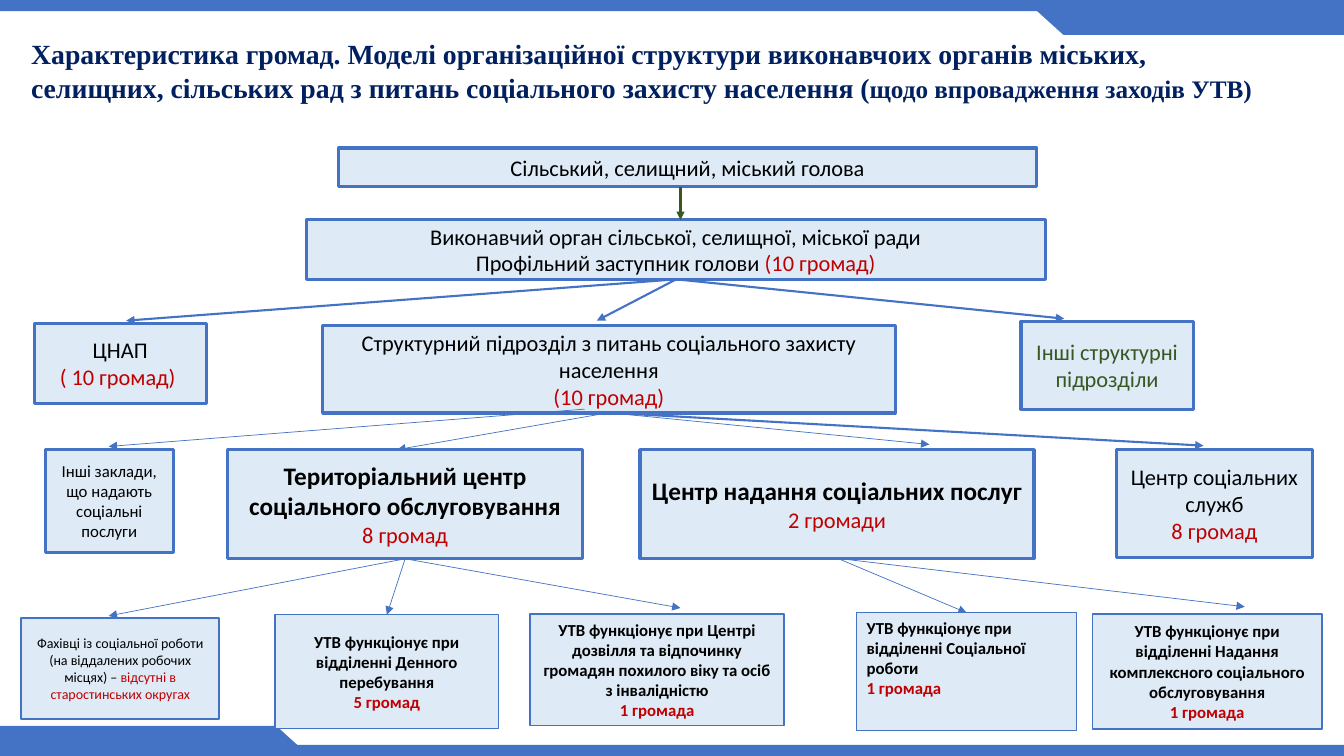
from dataclasses import dataclass

import pptx
import pptx.dml.color
import pptx.enum.shapes
import pptx.enum.text
import pptx.oxml
import pptx.oxml.ns
import pptx.util

Cm, Pt = pptx.util.Cm, pptx.util.Pt
RGB = pptx.dml.color.RGBColor.from_string
SHAPE = pptx.enum.shapes.MSO_SHAPE
ALIGN = pptx.enum.text.PP_ALIGN
ANCHOR = pptx.enum.text.MSO_ANCHOR


@dataclass(frozen=True)
class Style:
    size: float
    color: str
    bold: bool = False
    font: str = "Calibri"


class Theme:
    blue, pale, green = "4472C4", "DEEBF7", "385723"
    black, red, navy = "000000", "C00000", "002060"
    thick, medium, thin, hair = 2.25, 1.5, 1, 0.5
    title = Style(19.8, navy, True, "Times New Roman")
    subtitle = Style(18, navy, True, "Times New Roman")
    body = Style(16, black)
    note = Style(16, red)
    aside = Style(16, green)
    centre = Style(18, black, True)
    small = Style(12, black)
    group = Style(12, black, True)
    count = Style(12, red, True)
    tiny = Style(10, black)
    tiny_note = Style(10, red)


@dataclass(frozen=True)
class Box:
    """A rectangle in centimetres."""
    x: float
    y: float
    w: float
    h: float

    def inner(self, x, y, w, h):
        return Box(self.x + x, self.y + y, w, h)

    def lengths(self):
        return Cm(self.x), Cm(self.y), Cm(self.w), Cm(self.h)


def add_run(p, text, style):
    r = p.add_run()
    r.text = text
    r.font.name = style.font
    r.font.size = Pt(style.size)
    r.font.bold = style.bold
    r.font.color.rgb = RGB(style.color)


def plain_shape(s, box, fill, kind=SHAPE.RECTANGLE):
    sp = s.shapes.add_shape(kind, *box.lengths())
    sp.shadow.inherit = False
    sp.fill.solid()
    sp.fill.fore_color.rgb = RGB(fill)
    sp.line.fill.background()
    return sp


def edge(s, box, corner_x, corner_y, slant_x, turn=0):
    """A full-width bar with a slanted tab at one corner."""
    plain_shape(s, box, Theme.blue)
    plain_shape(s, box.inner(corner_x, corner_y, 7.06, 0.76), Theme.blue)
    slant = plain_shape(s, box.inner(slant_x, corner_y, 1.68, 0.76),
                        Theme.blue, SHAPE.FLOWCHART_MERGE)
    slant.rotation = turn


def heading(s, box):
    sp = s.shapes.title
    sp.left, sp.top, sp.width, sp.height = box.lengths()
    tf = sp.text_frame
    tf.word_wrap = True
    tf.auto_size = pptx.enum.text.MSO_AUTO_SIZE.NONE
    tf.vertical_anchor = ANCHOR.MIDDLE
    p = tf.paragraphs[0]
    p.alignment = ALIGN.LEFT
    p.line_spacing = Pt(24.3)
    add_run(p, "Характеристика громад. Моделі організаційної структури "
               "виконавчоих органів міських,", Theme.title)
    p.add_line_break()
    add_run(p, "селищних, сільських рад з питань соціального захисту "
               "населення (", Theme.title)
    add_run(p, "щодо впровадження заходів УТВ)", Theme.subtitle)


def node(s, box, width, *paragraphs, align=ALIGN.CENTER, anchor=ANCHOR.MIDDLE):
    """A bordered box; each paragraph is a list of (text, style) runs."""
    sp = plain_shape(s, box, Theme.pale)
    sp.line.color.rgb = RGB(Theme.blue)
    sp.line.width = Pt(width)
    tf = sp.text_frame
    tf.word_wrap = True
    tf.vertical_anchor = anchor
    for i, runs in enumerate(paragraphs):
        p = tf.add_paragraph() if i else tf.paragraphs[0]
        p.alignment = align
        for text, style in runs:
            add_run(p, text, style)


def arrow(s, box, start, end, width, color=Theme.blue):
    (x1, y1), (x2, y2) = start, end
    cx = s.shapes.add_connector(
        pptx.enum.shapes.MSO_CONNECTOR.STRAIGHT,
        Cm(box.x + x1), Cm(box.y + y1), Cm(box.x + x2), Cm(box.y + y2))
    cx.line.color.rgb = RGB(color)
    cx.line.width = Pt(width)
    tail = pptx.oxml.ns.qn("a:tailEnd")
    cx.line._get_or_add_ln().makeelement(tail)
    ln = cx.line._get_or_add_ln()
    ln.append(ln.makeelement(tail, {"type": "triangle"}))
    sp_pr = cx._element.spPr
    sp_pr.append(sp_pr.makeelement(pptx.oxml.ns.qn("a:effectLst"), {}))


def fan(s, box, start, ends, width):
    for end in ends:
        arrow(s, box, start, end, width)


def leaders(s, box):
    t = Theme
    node(s, box.inner(8.53, 0, 17.6, 0.97), t.thick,
         [("Сільський, селищний, міський голова", t.body)])
    node(s, box.inner(7.72, 1.81, 18.62, 1.5), t.thick,
         [("Виконавчий орган сільської, селищної, міської ради", t.body)],
         [("Профільний заступник голови ", t.body), ("(10 громад)", t.note)])
    arrow(s, box, (17.15, 0.99), (17.15, 1.81), t.medium, t.green)


def units(s, box):
    t = Theme
    fan(s, box, (17.04, -1.06), [(3.18, -0.02), (15.04, -0.02), (26.82, -0.07)],
        t.medium)
    node(s, box.inner(0.86, 0.05, 4.34, 2.01), t.thick,
         [("ЦНАП", t.body)], [("( 10 громад) ", t.note)])
    node(s, box.inner(8.13, 0.1, 14.43, 2.21), t.thick,
         [("Структурний підрозділ з питань соціального захисту населення",
           t.body)],
         [("(10 громад)", t.note)])
    node(s, box.inner(25.73, 0, 4.34, 2.21), t.thick,
         [("Інші структурні підрозділи", t.aside)])


def centres(s, box):
    t = Theme
    hub = (15.34, -0.93)
    fan(s, box, hub, [(30.33, -0.1)], t.medium)
    fan(s, box, hub, [(10.01, 0), (23.42, -0.13)], t.hair)
    fan(s, box, (14.73, -1.02), [(2.74, -0.08)], t.hair)
    node(s, box.inner(1.14, 0, 3.23, 2.59), t.thick,
         [("Інші заклади, що надають соціальні послуги", t.small)])
    node(s, box.inner(5.74, 0, 8.94, 2.74), t.thick,
         [("Територіальний центр соціального обслуговування", t.centre)],
         [("8 громад", t.note)])
    node(s, box.inner(16.13, 0, 9.93, 2.74), t.thick,
         [("Центр надання соціальних послуг", t.centre)],
         [("2 громади", t.note)])
    node(s, box.inner(28.14, 0, 4.93, 2.72), t.thick,
         [("Центр соціальних служб", t.body)], [("8 громад", t.note)])


def groups(s, box):
    t = Theme
    fan(s, box, (10.21, -1.36), [(2.74, 0.08), (9.75, 0.05), (17.15, -0.12)],
        t.hair)
    fan(s, box, (21.11, -1.37), [(24.36, 0), (31.37, -0.15)], t.hair)
    node(s, box.inner(0.53, 0.13, 5, 2.54), t.medium,
         [("Фахівці із соціальної роботи", t.tiny)],
         [("(на віддалених робочих місцях) – ", t.tiny),
          ("відсутні в старостинських округах", t.tiny_note)])
    node(s, box.inner(6.93, 0.05, 5.64, 2.87), t.thin,
         [("УТВ функціонує при відділенні Денного перебування", t.group)],
         [("5 громад", t.count)])
    node(s, box.inner(13.36, 0.03, 6.4, 2.82), t.thin,
         [("УТВ функціонує при Центрі дозвілля та відпочинку громадян "
           "похилого віку та осіб з інвалідністю", t.group)],
         [("1 громада", t.count)])
    node(s, box.inner(21.59, 0, 5.54, 2.97), t.thin,
         [("УТВ функціонує при відділенні Соціальної роботи", t.group)],
         [("1 громада", t.count)], align=ALIGN.LEFT, anchor=ANCHOR.TOP)
    node(s, box.inner(27.53, 0.03, 5.79, 2.9), t.thin,
         [("УТВ функціонує при відділенні Надання комплексного соціального "
           "обслуговування", t.group)],
         [("1 громада", t.count)])


def main():
    prs = pptx.Presentation()
    prs.slide_width, prs.slide_height = Cm(33.87), Cm(19.05)
    s = prs.slides.add_slide(prs.slide_layouts[5])
    edge(s, Box(0, 0, 33.87, 0.28), 26.81, 0.12, 25.96)
    edge(s, Box(0, 18.77, 33.87, 0.28), 0, -0.48, 6.12, 180)
    heading(s, Box(0.53, 1.04, 32.79, 1.47))
    leaders(s, Box(0, 3.73, 33.87, 3.31))
    units(s, Box(0, 8.1, 33.87, 2.31))
    centres(s, Box(0, 11.33, 33.87, 2.74))
    groups(s, Box(0, 15.44, 33.87, 2.97))
    prs.save("out.pptx")


if __name__ == "__main__":
    main()
